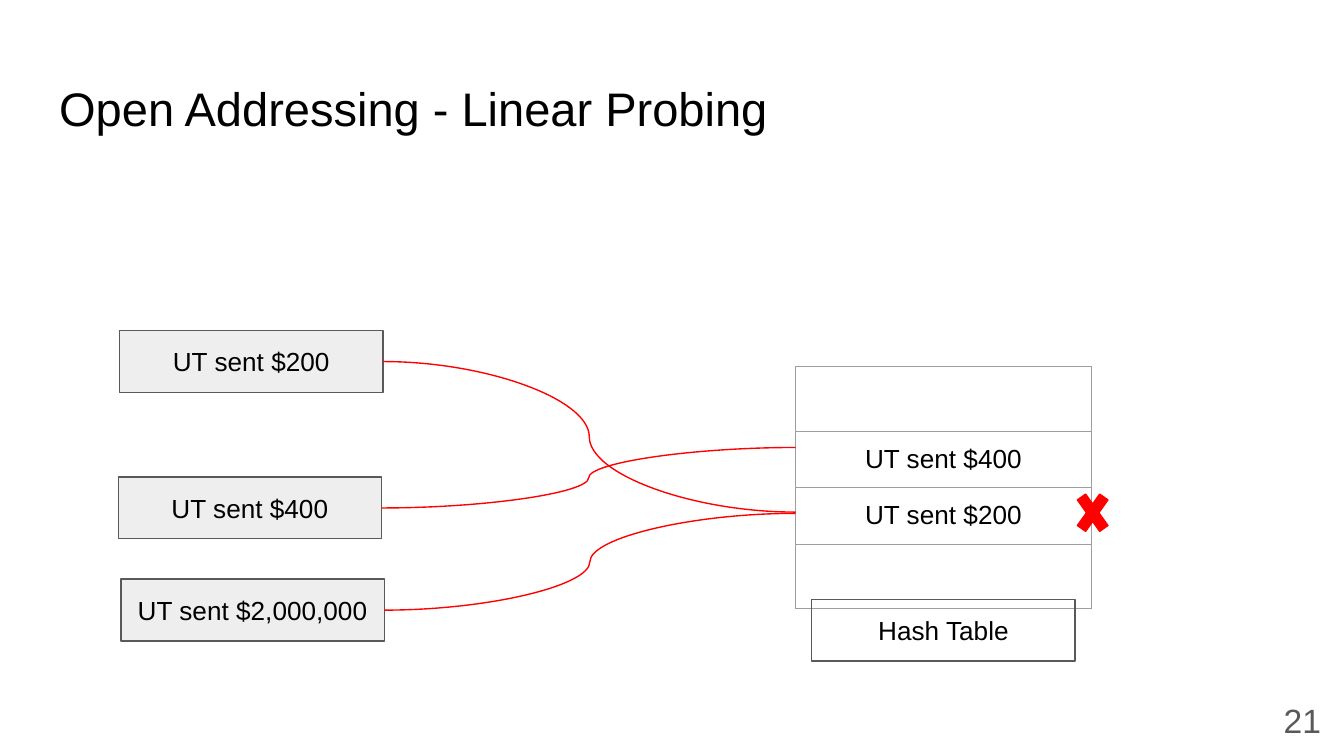
from lxml import etree
from pptx import Presentation
from pptx.dml.color import RGBColor
from pptx.enum.shapes import MSO_CONNECTOR, MSO_SHAPE
from pptx.enum.text import MSO_ANCHOR, PP_ALIGN
from pptx.oxml.ns import qn
from pptx.util import Inches, Pt

CURVE = MSO_CONNECTOR.CURVE
RECTANGLE, CROSS = MSO_SHAPE.RECTANGLE, MSO_SHAPE.MATH_MULTIPLY
MIDDLE, TOP = MSO_ANCHOR.MIDDLE, MSO_ANCHOR.TOP
CENTER, LEFT = PP_ALIGN.CENTER, PP_ALIGN.LEFT

BLACK = RGBColor(0x00, 0x00, 0x00)
DARK_GRAY = RGBColor(0x59, 0x59, 0x59)
LIGHT_GRAY = RGBColor(0xEE, 0xEE, 0xEE)
RED = RGBColor(0xFF, 0x00, 0x00)
BORDER = RGBColor(0x9E, 0x9E, 0x9E)

FONT = "Arial"
LINE_WIDTH = Pt(0.75)
RIGHT_SIDE = 3
BOX_SIZE = (1.96, 0.46)
TABLE_LEFT, TABLE_TOP = 5.92, 2.73
COLUMN_WIDTHS = (1.67, 0.53)
SLOTS = ("", "UT sent $400", "UT sent $200", "")
EMPTY_HEIGHT, FILLED_HEIGHT = 0.48, 0.42
# Key text, left and top of its box, height at which its curve meets the table
KEYS = (
    ("UT sent $200", 0.89, 2.46, 3.81),
    ("UT sent $400", 0.88, 3.55, 3.33),
    ("UT sent $2,000,000", 0.90, 4.31, 3.82),
)


def inches(*lengths):
    return [Inches(length) for length in lengths]


def write(frame, text, size=14, color=BLACK, align=CENTER, anchor=MIDDLE):
    frame.text = text
    frame.word_wrap = True
    frame.vertical_anchor = anchor
    frame.margin_left = frame.margin_right = Inches(0.1)
    frame.margin_top = frame.margin_bottom = Inches(0.1)
    para = frame.paragraphs[0]
    para.alignment = align
    for span in para.runs:
        span.font.name = FONT
        span.font.size = Pt(size)
        span.font.color.rgb = color


def add_outlined(page, kind, place, fill, line):
    shape = page.shapes.add_shape(kind, *inches(*place))
    shape.shadow.inherit = False
    if fill is None:
        shape.fill.background()
    else:
        shape.fill.solid()
        shape.fill.fore_color.rgb = fill
    shape.line.color.rgb = line
    shape.line.width = LINE_WIDTH
    return shape


def add_box(page, text, left, top, fill=None):
    box = add_outlined(page, RECTANGLE, (left, top, *BOX_SIZE), fill, DARK_GRAY)
    write(box.text_frame, text)
    return box


def add_probe(page, box, end_height):
    """Curve from a key's box to the table slot it hashes to."""
    start_x, start_y = box.left + box.width, box.top + box.height // 2
    curve = page.shapes.add_connector(
        CURVE, start_x, start_y, *inches(TABLE_LEFT, end_height))
    curve.begin_connect(box, RIGHT_SIDE)
    curve.line.color.rgb = RED
    curve.line.width = LINE_WIDTH
    etree.SubElement(curve._element.spPr, qn("a:effectLst"))


def set_borders(cell):
    properties = cell._tc.get_or_add_tcPr()
    for position, side in enumerate(("a:lnL", "a:lnR", "a:lnT", "a:lnB")):
        line = etree.Element(qn(side), w=str(LINE_WIDTH))
        fill = etree.SubElement(line, qn("a:solidFill"))
        etree.SubElement(fill, qn("a:srgbClr"), val=str(BORDER))
        properties.insert(position, line)


def add_hash_table(page):
    heights = [FILLED_HEIGHT if text else EMPTY_HEIGHT for text in SLOTS]
    place = inches(TABLE_LEFT, TABLE_TOP, sum(COLUMN_WIDTHS), sum(heights))
    table = page.shapes.add_table(
        len(SLOTS), len(COLUMN_WIDTHS), *place).table
    table.first_row = table.horz_banding = False
    for column, width in zip(table.columns, COLUMN_WIDTHS):
        column.width = Inches(width)
    for index, (text, height) in enumerate(zip(SLOTS, heights)):
        table.rows[index].height = Inches(height)
        for cell in table.rows[index].cells:
            cell.fill.background()
            cell.margin_top = cell.margin_bottom = Inches(0.1 if text else 0.05)
            set_borders(cell)
        slot = table.cell(index, 0)
        slot.merge(table.cell(index, len(COLUMN_WIDTHS) - 1))
        if text:
            write(slot.text_frame, text, anchor=TOP)


def add_title(page, text):
    title = page.shapes.title
    title.left, title.top, title.width, title.height = inches(
        0.34, 0.49, 9.32, 0.63)
    write(title.text_frame, text, size=25.2, align=LEFT)


def add_page_number(page, number):
    box = page.shapes.add_textbox(*inches(9.42, 5.11, 0.54, 0.5))
    write(box.text_frame, number, size=18, color=DARK_GRAY, anchor=TOP)


def main():
    deck = Presentation()
    deck.slide_width = Inches(10)
    deck.slide_height = deck.slide_width * 9 // 16
    page = deck.slides.add_slide(deck.slide_layouts[5])
    add_title(page, "Open Addressing - Linear Probing")
    add_hash_table(page)
    for text, left, top, end_height in KEYS:
        box = add_box(page, text, left, top, LIGHT_GRAY)
        add_probe(page, box, end_height)
    add_box(page, "Hash Table", 6.04, 4.46)
    cross = add_outlined(page, CROSS, (7.97, 3.59, 0.32, 0.45), RED, RED)
    cross.adjustments[0] = 0.235
    add_page_number(page, "21")
    deck.save("out.pptx")


if __name__ == "__main__":
    main()
